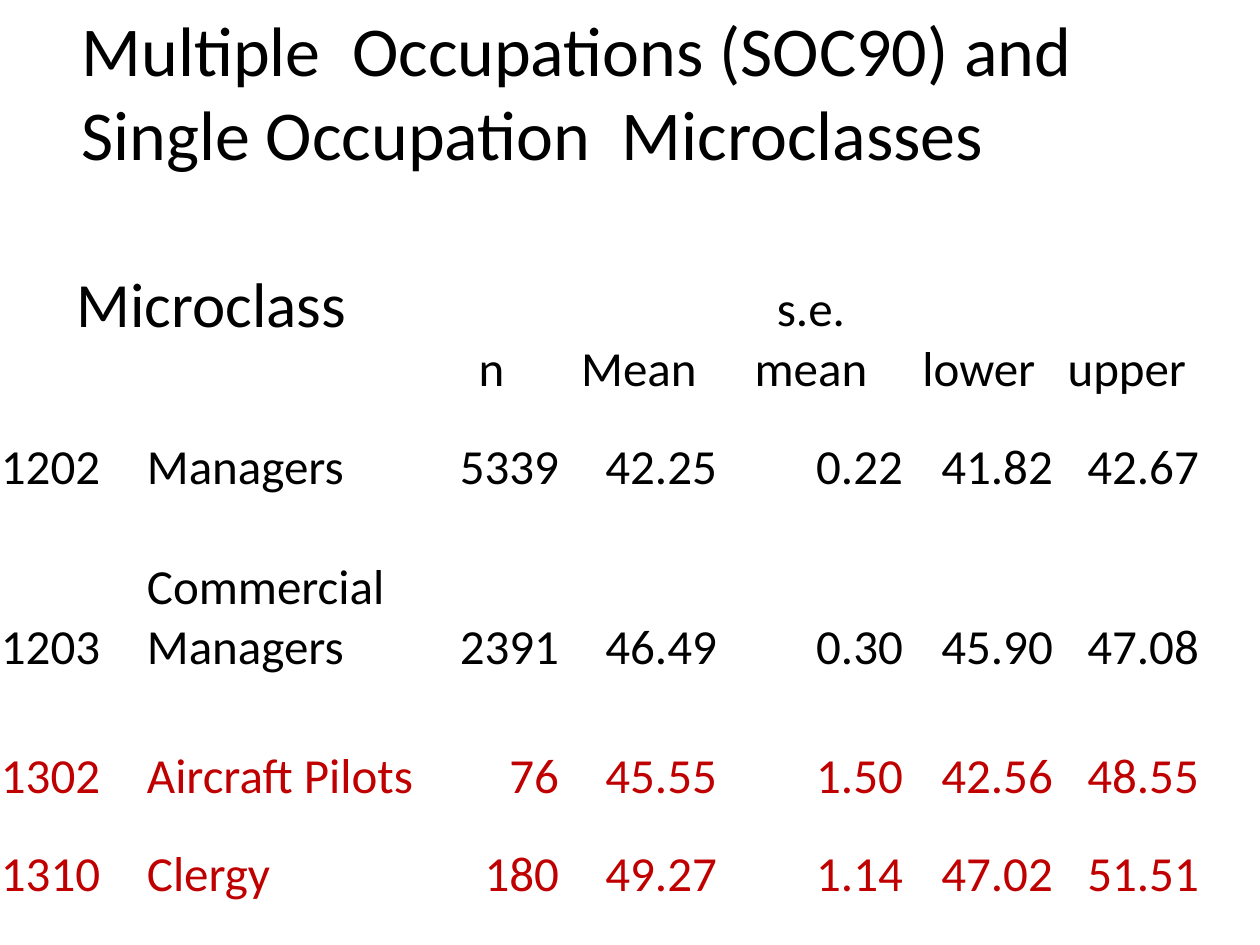
from pptx import Presentation
from pptx.dml.color import RGBColor
from pptx.enum.text import MSO_ANCHOR, MSO_AUTO_SIZE, PP_ALIGN
from pptx.util import Pt

LEFT, CENTER, RIGHT = PP_ALIGN.LEFT, PP_ALIGN.CENTER, PP_ALIGN.RIGHT
TOP, BOTTOM = MSO_ANCHOR.TOP, MSO_ANCHOR.BOTTOM
GROW = MSO_AUTO_SIZE.SHAPE_TO_FIT_TEXT

EMU_PER_PX = 914400 // 126
FONT = "Calibri"
BLACK, RED = "000000", "C00000"

TITLE = "Multiple  Occupations (SOC90) and Single Occupation  Microclasses"
HEADINGS = ["Microclass", "", "n", "Mean", "s.e. mean", "lower", "upper"]
MULTIPLE_OCCUPATIONS = [
    ("1202", "Managers", "5339", "42.25", "0.22", "41.82", "42.67"),
    ("1203", "Commercial Managers", "2391", "46.49", "0.30", "45.90", "47.08"),
]
SINGLE_OCCUPATIONS = [
    ("1302", "Aircraft Pilots", "76", "45.55", "1.50", "42.56", "48.55"),
    ("1310", "Clergy", "180", "49.27", "1.14", "47.02", "51.51"),
]
COLUMN_WIDTHS = [146, 277, 137, 158, 186, 150, 146]
ROW_HEIGHTS = [134, 98, 180, 129, 98]
TABLE_LEFT, TABLE_TOP = 0, 266
TITLE_BOX = (69, 0, 1131, 183)
TEXT_COLUMNS = 2


def px(length):
    return length * EMU_PER_PX


def add_text(frame, text, size, color, align):
    para = frame.paragraphs[0]
    para.alignment = align
    span = para.add_run()
    span.text = text
    span.font.name = FONT
    span.font.size = Pt(size)
    span.font.bold = False
    span.font.color.rgb = RGBColor.from_string(color)


def add_title(page):
    title = page.shapes.title
    title.left, title.top, title.width, title.height = map(px, TITLE_BOX)
    frame = title.text_frame
    frame.word_wrap = True
    frame.auto_size = GROW
    frame.vertical_anchor = TOP
    add_text(frame, TITLE, 40, BLACK, LEFT)


def add_microclass_table(page):
    table = page.shapes.add_table(
        len(ROW_HEIGHTS), len(COLUMN_WIDTHS), px(TABLE_LEFT), px(TABLE_TOP),
        px(sum(COLUMN_WIDTHS)), px(sum(ROW_HEIGHTS))).table
    table.first_row = table.horz_banding = False
    for column, width in zip(table.columns, COLUMN_WIDTHS):
        column.width = px(width)
    for row, height in zip(table.rows, ROW_HEIGHTS):
        row.height = px(height)

    lines = [(HEADINGS, BLACK)]
    lines += [(line, BLACK) for line in MULTIPLE_OCCUPATIONS]
    lines += [(line, RED) for line in SINGLE_OCCUPATIONS]
    for row_index, (line, color) in enumerate(lines):
        for column_index, text in enumerate(line):
            cell = table.cell(row_index, column_index)
            cell.fill.background()
            cell.margin_left = cell.margin_right = cell.margin_top = px(1)
            cell.margin_bottom = 0
            cell.vertical_anchor = BOTTOM
            if not text:
                continue
            if row_index == 0:
                align = CENTER
            else:
                align = LEFT if column_index < TEXT_COLUMNS else RIGHT
            size = 36 if text == HEADINGS[0] else 28
            add_text(cell.text_frame, text, size, color, align)

    heading = table.cell(0, 0)
    heading.merge(table.cell(0, TEXT_COLUMNS - 1))
    heading.vertical_anchor = TOP


def main():
    deck = Presentation()
    deck.slide_width, deck.slide_height = px(1260), px(945)
    page = deck.slides.add_slide(deck.slide_layouts[5])
    add_title(page)
    add_microclass_table(page)
    deck.save("out.pptx")


if __name__ == "__main__":
    main()
